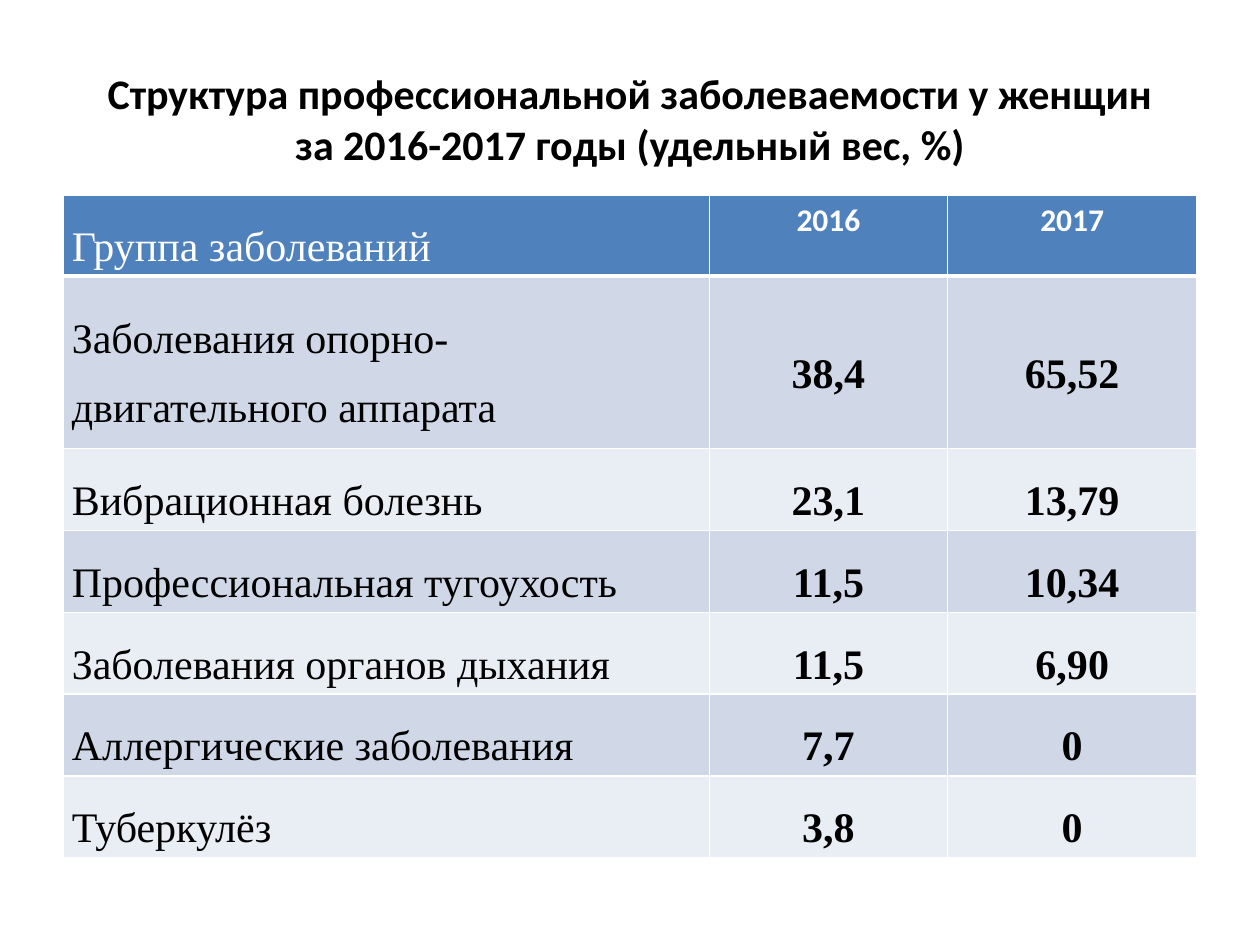
from dataclasses import dataclass

from lxml.etree import SubElement
from pptx import Presentation
from pptx.dml.color import RGBColor
from pptx.enum.text import MSO_ANCHOR as Anchor, PP_ALIGN as Align
from pptx.oxml.ns import qn
from pptx.slide import Slide
from pptx.table import _Cell as Cell
from pptx.text.text import _Paragraph as Paragraph
from pptx.util import Inches, Pt

SLIDE_WIDTH, SLIDE_HEIGHT = Inches(10), Inches(7.5)
MARGIN = 0.05  # share of the slide's width
TITLE_TOP, TITLE_HEIGHT = 0.04, 0.17  # shares of the slide's height
TABLE_TOP = 1.55
COLUMN_WIDTHS = (5.13, 1.89, 1.98)
HEADER_HEIGHT, LINE_ROW_HEIGHT, TALL_ROW_HEIGHT = 0.64, 0.65, 1.37

BLACK, WHITE = "000000", "FFFFFF"
HEADER_FILL = "4F81BD"
BAND_FILLS = ("D0D8E8", "E9EDF4")

TITLE_LINES = (
    "Структура профессиональной заболеваемости у женщин",
    "за 2016-2017 годы (удельный вес, %)",
)
HEADER = ("Группа заболеваний", "2016", "2017")


@dataclass(frozen=True)
class DiseaseGroup:
    name: str
    share_2016: str
    share_2017: str
    height: float = LINE_ROW_HEIGHT


@dataclass(frozen=True)
class TextStyle:
    font: str = "Times New Roman"
    size: int = 24
    bold: bool = False
    color: str = BLACK
    align: Align = Align.LEFT


DISEASE_GROUPS = (
    DiseaseGroup("Заболевания опорно-двигательного аппарата", "38,4", "65,52", TALL_ROW_HEIGHT),
    DiseaseGroup("Вибрационная болезнь", "23,1", "13,79"),
    DiseaseGroup("Профессиональная тугоухость", "11,5", "10,34"),
    DiseaseGroup("Заболевания органов дыхания", "11,5", "6,90"),
    DiseaseGroup("Аллергические заболевания", "7,7", "0"),
    DiseaseGroup("Туберкулёз", "3,8", "0"),
)

TITLE_STYLE = TextStyle("Calibri", bold=True, align=Align.CENTER)
GROUP_HEADER_STYLE = TextStyle(color=WHITE)
YEAR_STYLE = TextStyle("Calibri", 18, True, WHITE, Align.CENTER)
NAME_STYLE = TextStyle()
SHARE_STYLE = TextStyle(bold=True, align=Align.CENTER)


def rgb(value: str) -> RGBColor:
    return RGBColor.from_string(value)


def add_run(paragraph: Paragraph, text: str, style: TextStyle) -> None:
    paragraph.alignment = style.align
    run = paragraph.add_run()
    run.text = text
    run.font.name = style.font
    run.font.size = Pt(style.size)
    run.font.bold = style.bold
    run.font.color.rgb = rgb(style.color)


def set_borders(cell: Cell, bottom_width: int) -> None:
    properties = cell._tc.get_or_add_tcPr()
    for side, width in (("L", 1), ("R", 1), ("T", 1), ("B", bottom_width)):
        line = SubElement(properties, qn(f"a:ln{side}"), w=str(Pt(width)))
        fill = SubElement(line, qn("a:solidFill"))
        SubElement(fill, qn("a:srgbClr"), val=WHITE)


def fill_cell(cell: Cell, text: str, style: TextStyle, fill: str,
              spaced: bool = True, bottom_width: int = 1) -> None:
    """Spaced cells are centred vertically, with 1.5 line spacing and tight margins."""
    set_borders(cell, bottom_width)
    cell.fill.solid()
    cell.fill.fore_color.rgb = rgb(fill)
    paragraph = cell.text_frame.paragraphs[0]
    if spaced:
        cell.vertical_anchor = Anchor.MIDDLE
        cell.margin_left = cell.margin_right = Inches(0.07)
        cell.margin_top = cell.margin_bottom = 0
        paragraph.line_spacing = 1.5
    add_run(paragraph, text, style)


def add_title(slide: Slide) -> None:
    box = slide.shapes.add_textbox(
        int(SLIDE_WIDTH * MARGIN), int(SLIDE_HEIGHT * TITLE_TOP),
        int(SLIDE_WIDTH * (1 - 2 * MARGIN)), int(SLIDE_HEIGHT * TITLE_HEIGHT))
    frame = box.text_frame
    frame.word_wrap = True
    frame.vertical_anchor = Anchor.MIDDLE
    paragraph = frame.paragraphs[0]
    for index, line in enumerate(TITLE_LINES):
        if index:
            paragraph.add_line_break()
        add_run(paragraph, line, TITLE_STYLE)


def add_disease_table(slide: Slide) -> None:
    heights = [HEADER_HEIGHT, *(group.height for group in DISEASE_GROUPS)]
    table = slide.shapes.add_table(
        len(heights), len(COLUMN_WIDTHS), int(SLIDE_WIDTH * MARGIN), Inches(TABLE_TOP),
        Inches(sum(COLUMN_WIDTHS)), Inches(sum(heights))).table
    for column, width in zip(table.columns, COLUMN_WIDTHS):
        column.width = Inches(width)
    for row, height in zip(table.rows, heights):
        row.height = Inches(height)

    for column, text in enumerate(HEADER):
        style = YEAR_STYLE if column else GROUP_HEADER_STYLE
        fill_cell(table.cell(0, column), text, style, HEADER_FILL,
                  spaced=column == 0, bottom_width=3)
    for index, group in enumerate(DISEASE_GROUPS):
        band = BAND_FILLS[index % len(BAND_FILLS)]
        for column, text in enumerate((group.name, group.share_2016, group.share_2017)):
            style = SHARE_STYLE if column else NAME_STYLE
            fill_cell(table.cell(index + 1, column), text, style, band)


def main() -> None:
    presentation = Presentation()
    presentation.slide_width, presentation.slide_height = SLIDE_WIDTH, SLIDE_HEIGHT
    slide = presentation.slides.add_slide(presentation.slide_layouts[6])
    add_title(slide)
    add_disease_table(slide)
    presentation.save("out.pptx")


if __name__ == "__main__":
    main()
